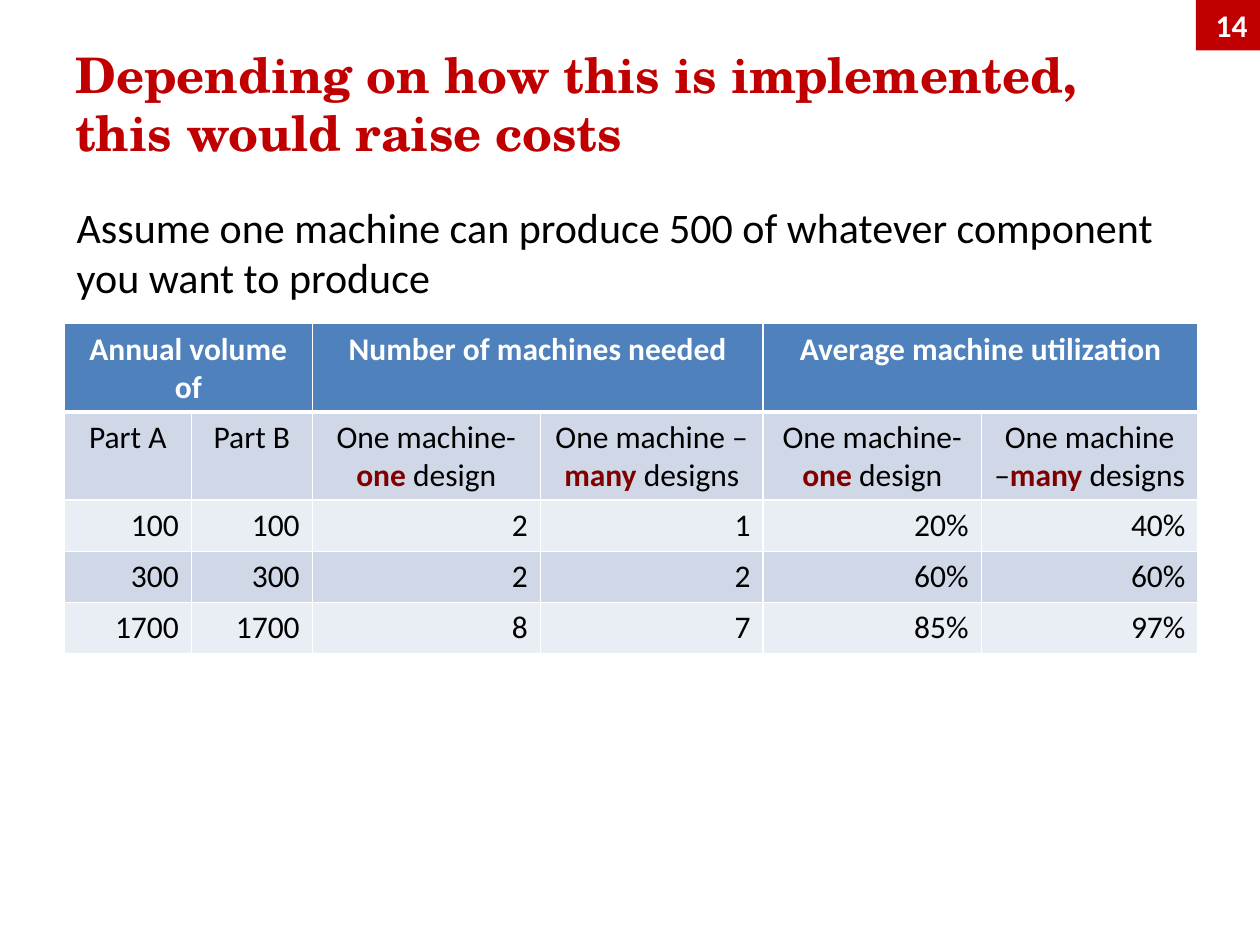
import lxml.etree
import pptx
import pptx.dml.color
import pptx.enum.shapes
import pptx.enum.text
import pptx.oxml.ns
import pptx.util

Pt = pptx.util.Pt
ALIGN = pptx.enum.text.PP_ALIGN
ANCHOR = pptx.enum.text.MSO_ANCHOR

BODY_FONT = "Calibri"
TITLE_FONT = "TeX Gyre Schola"
RED, MAROON, BLACK, WHITE = "C00000", "800000", "000000", "FFFFFF"
HEADER_FILL, DARK_BAND, LIGHT_BAND = "4F81BD", "D0D8E8", "E9EDF4"

COLUMN_WIDTHS = [72.7, 69.1, 130.3, 127.4, 124.6, 123.9]
ROW_HEIGHT = 29.2
GROUPS = ["Annual volume of", "Number of machines needed", "Average machine utilization"]
# Each subheading is a list of (text, emphasised) runs
ONE_DESIGN = [("One machine-", False), ("one", True), (" design", False)]
MANY_DESIGNS = [("One machine –", False), ("many", True), (" designs", False)]
MANY_UTILIZATION = [("One machine –", False), ("many ", True), ("designs", False)]
SUBHEADINGS = [[("Part A", False)], [("Part B", False)],
               ONE_DESIGN, MANY_DESIGNS, ONE_DESIGN, MANY_UTILIZATION]
VOLUMES = [
    ["100", "100", "2", "1", "20%", "40%"],
    ["300", "300", "2", "2", "60%", "60%"],
    ["1700", "1700", "8", "7", "85%", "97%"],
]


def rgb(hex_color):
    return pptx.dml.color.RGBColor.from_string(hex_color)


def add_run(paragraph, text, size, color, bold=False, font=BODY_FONT):
    run = paragraph.add_run()
    run.text = text
    run.font.name = font
    run.font.size = Pt(size)
    run.font.bold = bold
    run.font.color.rgb = rgb(color)


def add_text(slide, left, top, width, height, text, size, color, **style):
    box = slide.shapes.add_textbox(Pt(left), Pt(top), Pt(width), Pt(height))
    box.text_frame.word_wrap = True
    add_run(box.text_frame.paragraphs[0], text, size, color, **style)


def add_page_number(slide, number):
    tab = slide.shapes.add_shape(pptx.enum.shapes.MSO_SHAPE.RECTANGLE,
                                 Pt(683.3), Pt(0), Pt(36.7), Pt(28.8))
    tab.shadow.inherit = False
    tab.fill.solid()
    tab.fill.fore_color.rgb = rgb(RED)
    tab.line.fill.background()
    tab.text_frame.vertical_anchor = ANCHOR.MIDDLE
    paragraph = tab.text_frame.paragraphs[0]
    paragraph.alignment = ALIGN.RIGHT
    add_run(paragraph, number, 18, WHITE, bold=True)


def style_cell(cell, fill, bottom=1, top=1):
    # Borders must precede the fill in the cell properties
    properties = cell._tc.get_or_add_tcPr()
    qn = pptx.oxml.ns.qn
    for side, width in (("L", 1), ("R", 1), ("T", top), ("B", bottom)):
        border = lxml.etree.SubElement(properties, qn("a:ln" + side), w=str(Pt(width)))
        solid = lxml.etree.SubElement(border, qn("a:solidFill"))
        lxml.etree.SubElement(solid, qn("a:srgbClr"), val=WHITE)
    cell.fill.solid()
    cell.fill.fore_color.rgb = rgb(fill)


def fill_cell(cell, runs, alignment, color=BLACK, bold=False):
    paragraph = cell.text_frame.paragraphs[0]
    paragraph.alignment = alignment
    for text, emphasised in runs:
        add_run(paragraph, text, 18, MAROON if emphasised else color, bold or emphasised)


def add_cost_table(slide):
    row_count = 2 + len(VOLUMES)
    table = slide.shapes.add_table(row_count, len(COLUMN_WIDTHS), Pt(36.7), Pt(185),
                                   Pt(sum(COLUMN_WIDTHS)), Pt(ROW_HEIGHT * row_count)).table
    for column, width in zip(table.columns, COLUMN_WIDTHS):
        column.width = Pt(width)
    for index, row in enumerate(table.rows):
        row.height = Pt(ROW_HEIGHT)
        fill = HEADER_FILL if index == 0 else DARK_BAND if index % 2 else LIGHT_BAND
        for cell in row.cells:
            style_cell(cell, fill, bottom=3 if index == 0 else 1, top=3 if index == 1 else 1)

    # Group headings, each over two columns
    for index, heading in enumerate(GROUPS):
        cell = table.cell(0, 2 * index)
        cell.merge(table.cell(0, 2 * index + 1))
        fill_cell(cell, [(heading, False)], ALIGN.CENTER, WHITE, bold=True)

    # Subheadings and values
    for column, runs in enumerate(SUBHEADINGS):
        fill_cell(table.cell(1, column), runs, ALIGN.CENTER)
    for row, values in enumerate(VOLUMES, start=2):
        for column, value in enumerate(values):
            fill_cell(table.cell(row, column), [(value, False)], ALIGN.RIGHT)


def main():
    deck = pptx.Presentation()
    deck.slide_width, deck.slide_height = Pt(720), Pt(540)
    slide = deck.slides.add_slide(deck.slide_layouts[6])

    # Title
    add_text(slide, 36, 21.6, 648, 90,
             "Depending on how this is implemented, this would raise costs",
             28, RED, bold=True, font=TITLE_FONT)
    add_cost_table(slide)
    add_page_number(slide, "14")
    # Assumption behind the table
    add_text(slide, 36.7, 111.6, 649.4, 65.5,
             "Assume one machine can produce 500 of whatever component you want to produce",
             24, BLACK)

    deck.save("out.pptx")


if __name__ == "__main__":
    main()
